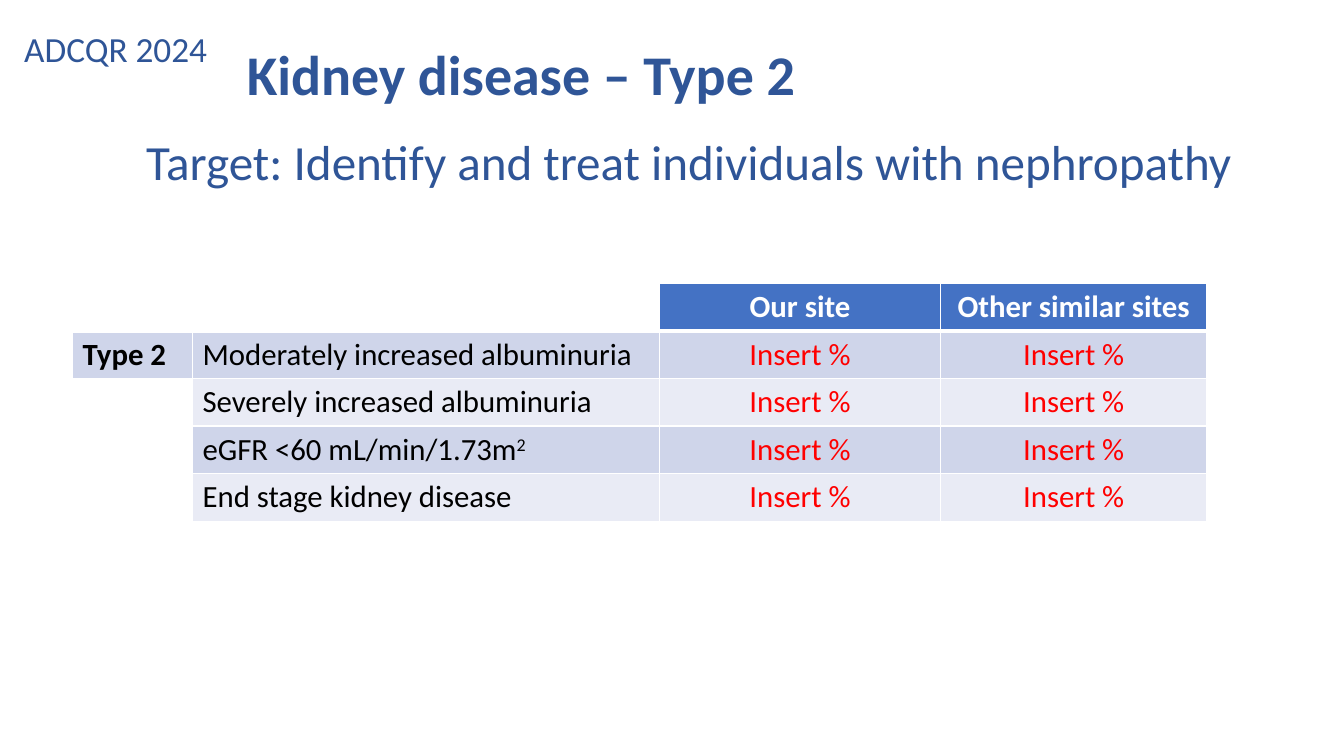
from lxml.etree import SubElement
from pptx import Presentation
from pptx.dml.color import RGBColor
from pptx.enum.text import MSO_ANCHOR, MSO_AUTO_SIZE, PP_ALIGN
from pptx.oxml.ns import qn
from pptx.util import Inches, Pt

COLORS = {
    "heading": "2F5597", "header": "4472C4", "white": "FFFFFF",
    "band_dark": "CFD5EA", "band_light": "E9EBF5",
    "label": "000000", "insert": "FF0000",
}
FONT = "Calibri"
REGISTRY = "ADCQR 2024"
HEADING = "Kidney disease – Type 2"
TARGET = "Target: Identify and treat individuals with nephropathy"
GROUP = "Type 2"
SITES = ["Our site", "Other similar sites"]
MEASURES = [
    ("Moderately increased albuminuria", ""),
    ("Severely increased albuminuria", ""),
    ("eGFR <60 mL/min/1.73m", "2"),
    ("End stage kidney disease", ""),
]
VALUE = "Insert %"
COLUMN_WIDTHS = [1.19, 4.63, 2.79, 2.64]


def add_run(paragraph, text, size, color, bold=False):
    run = paragraph.add_run()
    run.text = text
    run.font.name = FONT
    run.font.size = Pt(size)
    run.font.bold = bold
    run.font.color.rgb = RGBColor.from_string(COLORS[color])
    return run


def place(shape, left, top, width, height):
    shape.left, shape.top = Inches(left), Inches(top)
    shape.width, shape.height = Inches(width), Inches(height)
    frame = shape.text_frame
    frame.word_wrap = True
    frame.auto_size = MSO_AUTO_SIZE.NONE
    paragraph = frame.paragraphs[0]
    paragraph.alignment = PP_ALIGN.LEFT
    return frame, paragraph


def style_cell(cell, fill, top, bottom):
    properties = cell._tc.get_or_add_tcPr()
    for side, width in (("L", 1), ("R", 1), ("T", top), ("B", bottom)):
        line = SubElement(properties, qn(f"a:ln{side}"), w=str(Pt(width)))
        line_fill = SubElement(line, qn("a:solidFill"))
        SubElement(line_fill, qn("a:srgbClr"), val=COLORS["white"])
    cell.fill.solid()
    cell.fill.fore_color.rgb = RGBColor.from_string(COLORS[fill])


def write_cell(cell, text, color, bold=False, centered=False):
    paragraph = cell.text_frame.paragraphs[0]
    paragraph.alignment = PP_ALIGN.CENTER if centered else PP_ALIGN.LEFT
    add_run(paragraph, text, 22, color, bold)
    return paragraph


def add_results_table(slide):
    frame = slide.shapes.add_table(
        len(MEASURES) + 1, len(COLUMN_WIDTHS),
        Inches(0.72), Inches(2.81), Inches(sum(COLUMN_WIDTHS)), Inches(2.33))
    table = frame.table
    for column, width in zip(table.columns, COLUMN_WIDTHS):
        column.width = Inches(width)

    for row_index, row in enumerate(table.rows):
        band = "band_dark" if row_index % 2 else "band_light"
        for column_index, cell in enumerate(row.cells):
            if row_index == 0:
                fill = "header" if column_index > 1 else "white"
            else:
                fill = "white" if column_index == 0 and row_index > 1 else band
            style_cell(cell, fill, 3 if row_index == 1 else 1, 3 if row_index == 0 else 1)

    write_cell(table.cell(1, 0), GROUP, "label", bold=True)
    for column_index, site in enumerate(SITES, start=2):
        write_cell(table.cell(0, column_index), site, "white", bold=True, centered=True)
    for row_index, (measure, exponent) in enumerate(MEASURES, start=1):
        paragraph = write_cell(table.cell(row_index, 1), measure, "label")
        if exponent:
            run = add_run(paragraph, exponent, 22, "label")
            run.font._element.set("baseline", "30000")
        for column_index in range(2, 2 + len(SITES)):
            write_cell(table.cell(row_index, column_index), VALUE, "insert", centered=True)


presentation = Presentation()
presentation.slide_width = Inches(13.33)
presentation.slide_height = Inches(7.5)
slide = presentation.slides.add_slide(presentation.slide_layouts[1])

frame, paragraph = place(slide.shapes.title, 0.14, 0.27, 2.02, 0.47)
frame.vertical_anchor = MSO_ANCHOR.MIDDLE
frame.margin_right = 0
paragraph.line_spacing = 0.9
add_run(paragraph, REGISTRY, 25.2, "heading")

frame, paragraph = place(slide.placeholders[1], 1.35, 1.32, 11.28, 1.01)
paragraph.line_spacing = 0.9
paragraph.space_before = Pt(10)
paragraph_properties = paragraph._p.get_or_add_pPr()
paragraph_properties.set("marL", "0")
paragraph_properties.set("indent", "0")
SubElement(paragraph_properties, qn("a:buNone"))
add_run(paragraph, TARGET, 35.1, "heading")

heading = slide.shapes.add_textbox(0, 0, 0, 0)
frame, paragraph = place(heading, 2.35, 0.34, 10.98, 0.77)
add_run(paragraph, HEADING, 40, "heading", bold=True)

add_results_table(slide)
presentation.save("out.pptx")
